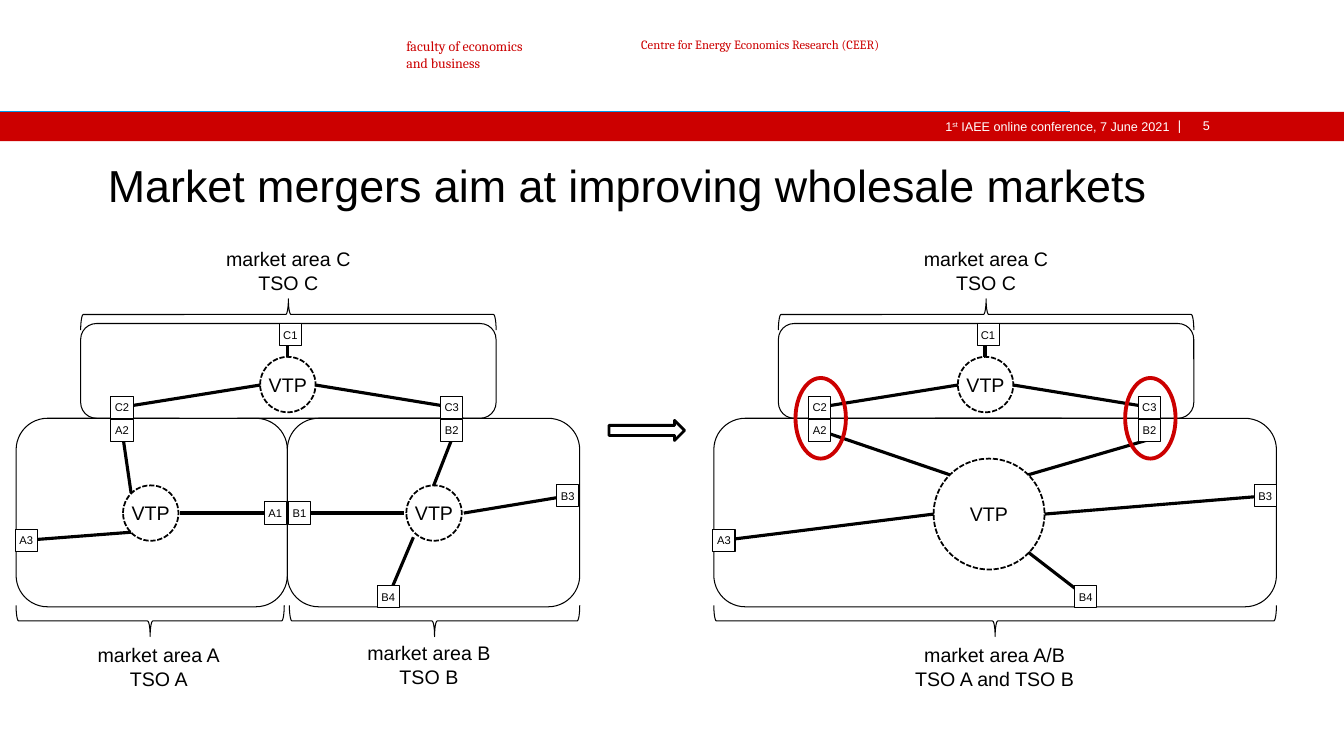
from lxml import etree
from pptx import Presentation
from pptx.dml.color import RGBColor
from pptx.enum.dml import MSO_LINE_DASH_STYLE as Dash
from pptx.enum.shapes import MSO_CONNECTOR as Connector, MSO_SHAPE as Shape
from pptx.enum.text import MSO_ANCHOR as Anchor, PP_ALIGN as Align
from pptx.oxml.ns import qn
from pptx.util import Inches, Pt

BLACK, WHITE, RED, BLUE = "000000", "FFFFFF", "CC0000", "0099EA"
CELL = 0.1
STATION = 2.2
STATIONS = {
    "C1": (26.2, 8.1), "C2": (9.5, 15.3), "C3": (42.2, 15.3),
    "A1": (24.7, 25.8), "A2": (9.5, 17.6), "A3": (0, 28.5),
    "B1": (27.1, 25.8), "B2": (42.2, 17.6), "B3": (53.7, 24.1), "B4": (35.9, 34.1),
}
LINK_SHIFT = {"C1": (-0.3, 0), "B2": (0, 0.9)}
AREA_C = {"area": (6.5, 8.1, 41.2, 9.4), "brace": (6.5, 5.65, 41.2, 3.1), "turn": 90,
          "caption": (6.5, 0, 41.2, 5.7), "lines": ["market area C", "TSO C"]}
LINKS_C = {"C1": (27, 11.4), "C2": (24.3, 14.2), "C3": (29.8, 14.2)}
HUB_C = (27.05, 14.15, 5.5)

BEFORE = {
    "areas": [
        AREA_C,
        {"area": (0.1, 17.5, 26.9, 18.7), "brace": (0.1, 36.05, 26.6, 3.1), "turn": 270,
         "caption": (1.3, 39.3, 25.9, 5.7), "lines": ["market area A", "TSO A"]},
        {"area": (27, 17.5, 29, 18.7), "brace": (27.2, 36.05, 28.8, 3.1), "turn": 270,
         "caption": (28.2, 39.1, 25.7, 5.7), "lines": ["market area B", "TSO B"]},
    ],
    "links": {**LINKS_C, "A1": (16.4, 26.9), "A2": (11.5, 24.9), "A3": (11.5, 28.8),
              "B1": (38.6, 26.9), "B2": (41.5, 24.2), "B3": (44.5, 26.9), "B4": (39.5, 29.3)},
    "hubs": [HUB_C, (13.45, 26.9, 5.5), (41.55, 26.9, 5.5)],
    "rings": [],
}
AFTER = {
    "areas": [
        AREA_C,
        {"area": (0.1, 17.5, 55.8, 18.7), "brace": (0.1, 36.05, 55.8, 3.1), "turn": 270,
         "caption": (0, 39.3, 55.9, 5.7), "lines": ["market area A/B", "TSO A and TSO B"]},
    ],
    "links": {**LINKS_C, "A2": (23.5, 23.1), "A3": (21.9, 27),
              "B2": (31.3, 23.1), "B3": (32.9, 27), "B4": (31.3, 30.8)},
    "hubs": [HUB_C, (27.4, 27, 11)],
    "rings": [(8.2, 13.5, 5, 8), (40.9, 13.5, 5, 8)],
}


def color(value):
    """Turn a hex string into a colour."""
    return RGBColor.from_string(value)


def cells(origin, box):
    """Convert a box in grid cells, relative to an origin, to slide lengths."""
    left, top, width, height = box
    return [Inches(n * CELL) for n in (origin[0] + left, origin[1] + top, width, height)]


def write(frame, lines, size, font="Arial", ink=BLACK, align=Align.CENTER, anchor=Anchor.MIDDLE, wrap=True):
    """Fill a frame with lines, each a string or a list of (text, baseline) runs."""
    frame.margin_left = frame.margin_right = frame.margin_top = frame.margin_bottom = 0
    frame.word_wrap, frame.vertical_anchor = wrap, anchor
    for index, line in enumerate(lines):
        paragraph = frame.add_paragraph() if index else frame.paragraphs[0]
        paragraph.alignment = align
        for text, baseline in [(line, 0)] if isinstance(line, str) else line:
            run = paragraph.add_run()
            run.text = text
            run.font.size, run.font.name = Pt(size), font
            run.font.color.rgb = color(ink)
            if baseline:
                run.font._element.set("baseline", str(baseline))


def draw(shapes, kind, origin, box, fill=None, line=BLACK, width=0.75):
    """Add a preset shape without shadow."""
    shape = shapes.add_shape(kind, *cells(origin, box))
    shape.shadow.inherit = False
    if fill:
        shape.fill.solid()
        shape.fill.fore_color.rgb = color(fill)
    else:
        shape.fill.background()
    if line:
        shape.line.color.rgb = color(line)
        shape.line.width = Pt(width)
    else:
        shape.line.fill.background()
    return shape


def connect(shapes, origin, start, end, ink=BLACK, width=2.25):
    """Add a straight line between two grid points."""
    points = [Inches((origin[i % 2] + n) * CELL) for i, n in enumerate((*start, *end))]
    link = shapes.add_connector(Connector.STRAIGHT, *points)
    link.line.color.rgb = color(ink)
    link.line.width = Pt(width)
    etree.SubElement(link._element.spPr, qn("a:effectLst"))


def label(shapes, origin, box, lines, size, **style):
    """Add a text box."""
    write(shapes.add_textbox(*cells(origin, box)).text_frame, lines, size, **style)


def add_area(shapes, origin, area, brace, turn, caption, lines):
    """Draw one market area with its brace and caption."""
    draw(shapes, Shape.ROUNDED_RECTANGLE, origin, area)
    left, top, width, height = brace
    upright = (left + (width - height) / 2, top + (height - width) / 2, height, width)
    draw(shapes, Shape.LEFT_BRACE, origin, upright).rotation = turn
    label(shapes, origin, caption, lines, 14)


def add_network(slide, origin, network):
    """Draw a gas network of areas, links, stations, hubs and rings."""
    shapes = slide.shapes.add_group_shape().shapes
    for name, hub_end in network["links"].items():
        shift = LINK_SHIFT.get(name, (0, 0))
        start = [corner + STATION / 2 + move for corner, move in zip(STATIONS[name], shift)]
        connect(shapes, origin, start, hub_end)
    for area in network["areas"]:
        add_area(shapes, origin, **area)
    for name in network["links"]:
        station = draw(shapes, Shape.RECTANGLE, origin, (*STATIONS[name], STATION, STATION), WHITE)
        write(station.text_frame, [name], 8, wrap=False)
    for x, y, size in network["hubs"]:
        hub = draw(shapes, Shape.OVAL, origin, (x - size / 2, y - size / 2, size, size), width=1.25)
        hub.line.dash_style = Dash.SQUARE_DOT
        write(hub.text_frame, ["VTP"], 14, wrap=False)
    for ring in network["rings"]:
        draw(shapes, Shape.OVAL, origin, ring, line=RED, width=2.75)


def add_header(slide, origin):
    """Draw the sender names and the red conference band."""
    shapes = slide.shapes
    sender = {"font": "Cambria", "ink": RED, "align": Align.LEFT, "anchor": Anchor.TOP}
    band = {"ink": WHITE, "align": Align.RIGHT, "anchor": Anchor.TOP, "wrap": False}
    conference = [("1", 0), ("st", 30000), (" IAEE online conference, 7 June 2021", 0)]
    draw(shapes, Shape.RECTANGLE, origin, (0, 11.1, 133.3, 2.9), RED, None)
    connect(shapes, origin, (-0.2, 11.1), (106.1, 11.1), BLUE, 0.75)
    label(shapes, origin, (40.3, 3.7, 12.6, 3.4), ["faculty of economics", "and business"], 10, wrap=False, **sender)
    label(shapes, origin, (63.6, 3.7, 32, 1.5), ["Centre for Energy Economics Research (CEER)"], 9, **sender)
    label(shapes, origin, (86.4, 11.8, 29.6, 1.5), [conference], 9, **band)
    label(shapes, origin, (116.6, 11.7, 0.6, 1.5), ["|"], 9, font="DejaVu Sans", **band)
    label(shapes, origin, (117.2, 11.7, 2.8, 1.5), ["5"], 9, **band)


def add_title(slide, origin, text):
    """Place and format the title."""
    title = slide.shapes.title
    title.left, title.top, title.width, title.height = cells(origin, (0, 0, 133.3, 8.7))
    write(title.text_frame, [text], 32, align=Align.LEFT)
    title.text_frame.margin_left, title.text_frame.margin_right = Inches(1.07), Inches(0.3)


def main():
    """Build the slide and save it."""
    deck = Presentation()
    deck.slide_width, deck.slide_height = Inches(13.33), Inches(7.5)
    slide = deck.slides.add_slide(deck.slide_layouts[5])
    add_header(slide, (0, 0))
    add_title(slide, (0, 14), "Market mergers aim at improving wholesale markets")
    add_network(slide, (1.5, 24), BEFORE)
    draw(slide.shapes, Shape.RIGHT_ARROW, (60.4, 41.7), (0, 0, 7.5, 2), WHITE, width=2)
    add_network(slide, (70.7, 24), AFTER)
    deck.save("out.pptx")


if __name__ == "__main__":
    main()
